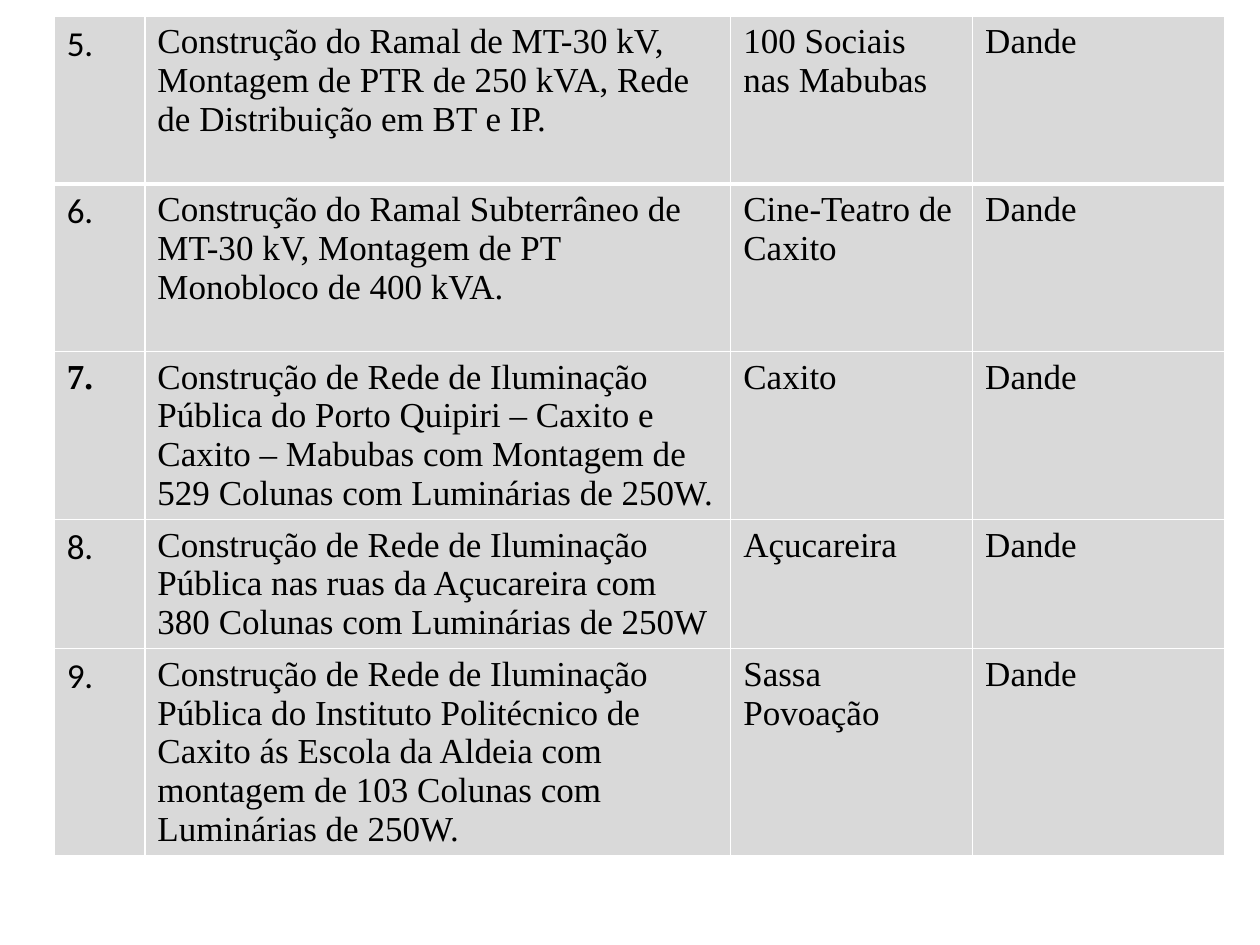
import dataclasses

import pptx
import pptx.dml.color
import pptx.oxml
import pptx.oxml.ns
import pptx.util


@dataclasses.dataclass(frozen=True)
class Theme:
    ink: str = "000000"
    cell: str = "D9D9D9"
    rule: str = "FFFFFF"
    body_font: str = "Times New Roman"
    number_font: str = "Calibri"
    size: int = 20
    thin: int = 1
    thick: int = 3
    hanging: float = 0.38
    line_height: float = 0.31
    cell_padding: float = 0.09


@dataclasses.dataclass(frozen=True)
class Work:
    number: str
    description: str
    place: str
    town: str
    lines: int
    bold_number: bool = False


WORKS = [
    Work("5.", "Construção do Ramal de MT-30 kV, Montagem de PTR de 250 kVA, "
         "Rede de Distribuição em BT e IP.", "100 Sociais nas Mabubas", "Dande", 4),
    Work("6.", "Construção do Ramal Subterrâneo de MT-30 kV, Montagem de PT "
         "Monobloco de 400 kVA.", "Cine-Teatro de Caxito", "Dande", 4),
    Work("7.", "Construção de Rede de Iluminação Pública do Porto Quipiri – Caxito e "
         "Caxito – Mabubas com Montagem de 529 Colunas com Luminárias de 250W.",
         "Caxito", "Dande", 4, bold_number=True),
    Work("8.", "Construção de Rede de Iluminação Pública nas ruas da Açucareira com "
         "380 Colunas com Luminárias de 250W", "Açucareira", "Dande", 3),
    Work("9.", "Construção de Rede de Iluminação Pública do Instituto Politécnico de "
         "Caxito ás Escola da Aldeia com montagem de 103 Colunas com Luminárias de 250W.",
         "Sassa Povoação", "Dande", 5),
]
COLUMN_WIDTHS = [0.72, 4.65, 1.92, 2]


class SlideBuilder:
    def __init__(self, deck, theme):
        self.theme = theme
        self.width, self.height = deck.slide_width, deck.slide_height
        self.slide = deck.slides.add_slide(deck.slide_layouts[6])

    def works_table(self, works, left, top, column_widths):
        """Place the table at percentages of the slide; columns are in inches."""
        theme = self.theme
        heights = [pptx.util.Inches(theme.line_height * work.lines + theme.cell_padding)
                   for work in works]
        widths = [pptx.util.Inches(width) for width in column_widths]
        table = self.slide.shapes.add_table(
            len(works), len(widths),
            int(self.width * left / 100), int(self.height * top / 100),
            sum(widths), sum(heights)).table
        table.first_row = table.horz_banding = False
        for column, width in zip(table.columns, widths):
            column.width = width
        for index, (work, height) in enumerate(zip(works, heights)):
            table.rows[index].height = height
            texts = (work.number, work.description, work.place, work.town)
            for cell, text in zip(table.rows[index].cells, texts):
                self.body_cell(cell, text)
                self.borders(cell, thick_top=index == 1, thick_bottom=index == 0)
            self.number_style(table.cell(index, 0), work.bold_number)

    def body_cell(self, cell, text):
        cell.text = text
        font = cell.text_frame.paragraphs[0].font
        font.name = self.theme.body_font
        font.size = pptx.util.Pt(self.theme.size)
        font.bold = False
        font.color.rgb = pptx.dml.color.RGBColor.from_string(self.theme.ink)
        cell.fill.solid()
        cell.fill.fore_color.rgb = pptx.dml.color.RGBColor.from_string(self.theme.cell)

    def number_style(self, cell, bold):
        paragraph = cell.text_frame.paragraphs[0]
        paragraph.font.bold = bold
        if not bold:
            paragraph.font.name = self.theme.number_font
        hanging = pptx.util.Inches(self.theme.hanging)
        properties = paragraph._p.get_or_add_pPr()
        properties.set("marL", str(hanging))
        properties.set("indent", str(-hanging))

    def borders(self, cell, thick_top, thick_bottom):
        properties = cell._tc.get_or_add_tcPr()
        sides = {"lnL": False, "lnR": False, "lnT": thick_top, "lnB": thick_bottom}
        for position, (side, thick) in enumerate(sides.items()):
            points = self.theme.thick if thick else self.theme.thin
            properties.insert(position, pptx.oxml.parse_xml(
                f'<a:{side} {pptx.oxml.ns.nsdecls("a")} w="{pptx.util.Pt(points)}">'
                f'<a:solidFill><a:srgbClr val="{self.theme.rule}"/></a:solidFill>'
                f'</a:{side}>'))


def main():
    deck = pptx.Presentation()
    deck.slide_width = pptx.util.Inches(10)
    deck.slide_height = pptx.util.Inches(7.5)
    builder = SlideBuilder(deck, Theme())
    builder.works_table(WORKS, left=4.3, top=1.73, column_widths=COLUMN_WIDTHS)
    deck.save("out.pptx")


if __name__ == "__main__":
    main()
